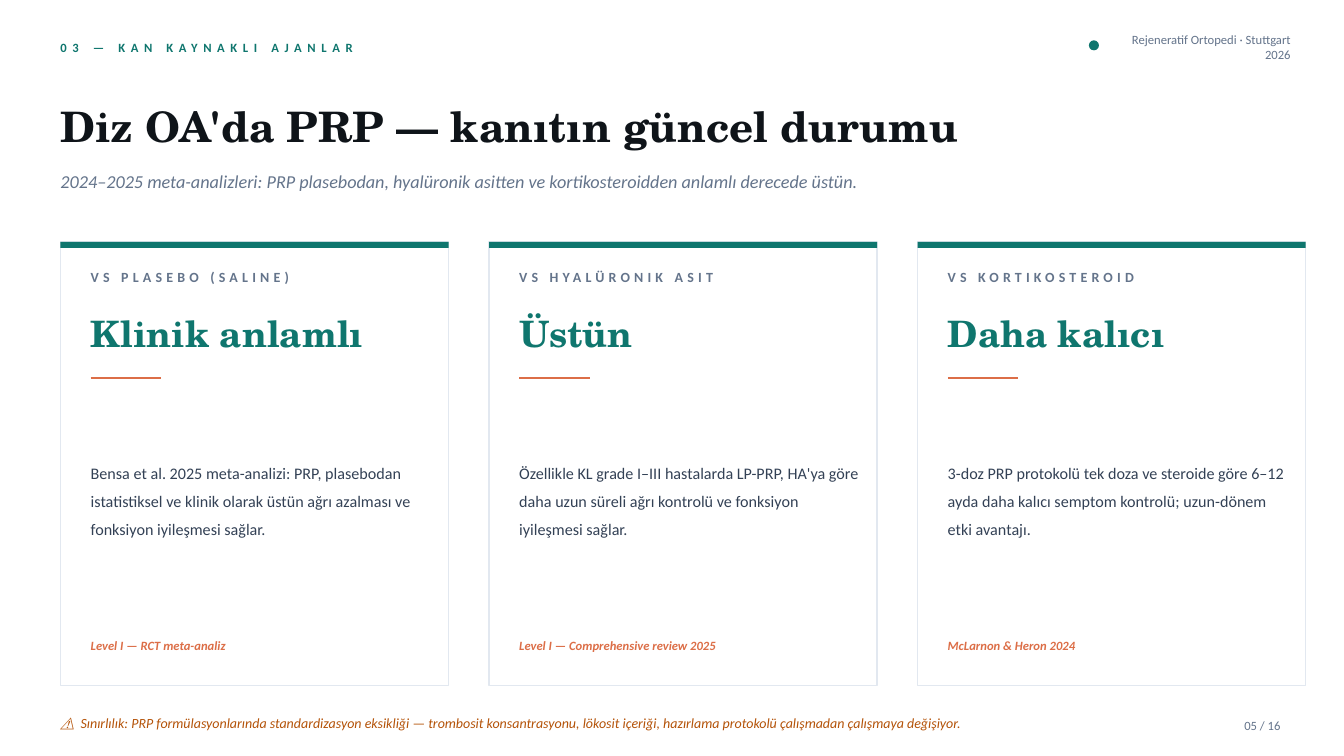
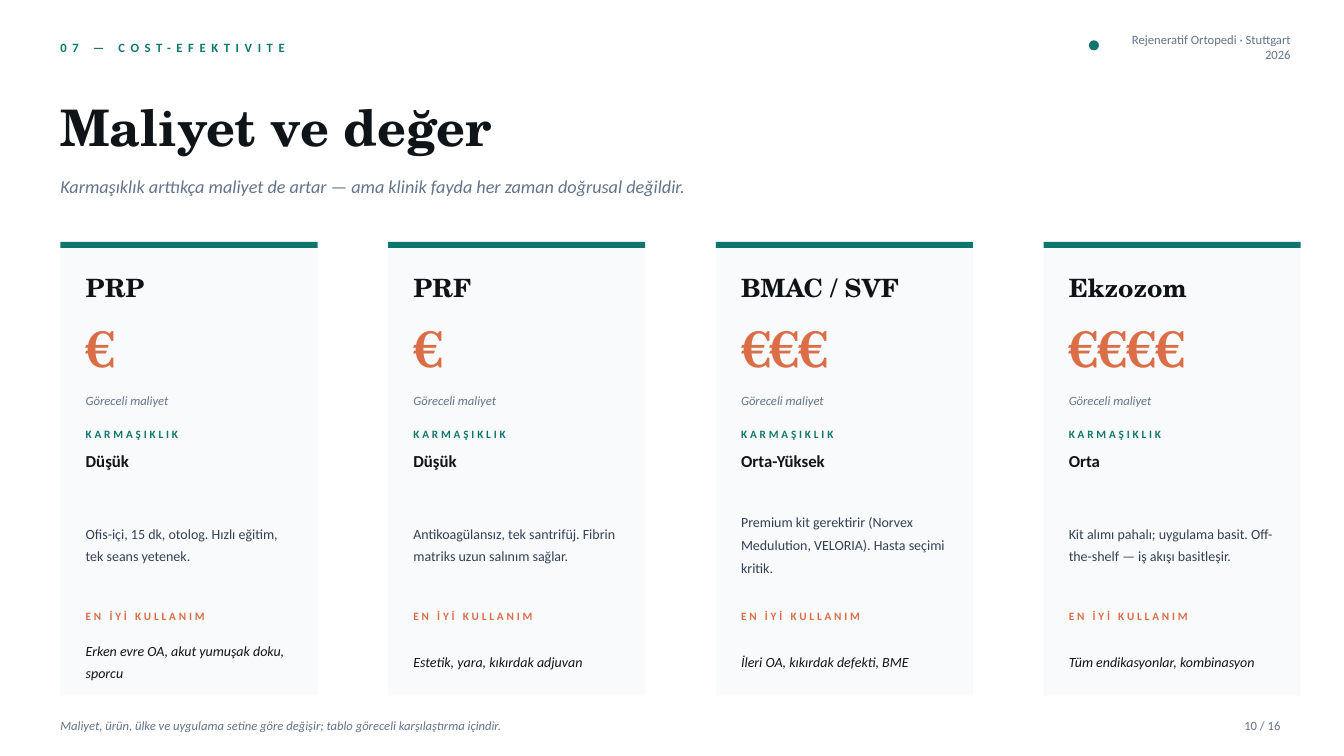
from lxml.etree import SubElement
from pptx import Presentation
from pptx.dml.color import RGBColor
from pptx.enum.shapes import MSO_CONNECTOR as Connector, MSO_SHAPE as Shape
from pptx.enum.text import MSO_ANCHOR as Anchor, MSO_AUTO_SIZE as AutoSize, PP_ALIGN as Align
from pptx.oxml.ns import qn
from pptx.util import Inches, Pt

TEAL = RGBColor(0x0F, 0x76, 0x6E)
CORAL = RGBColor(0xDC, 0x6E, 0x47)
AMBER = RGBColor(0xB4, 0x53, 0x09)
INK = RGBColor(0x0F, 0x14, 0x19)
BODY = RGBColor(0x33, 0x41, 0x55)
MUTED = RGBColor(0x64, 0x74, 0x8B)
BORDER = RGBColor(0xE2, 0xE8, 0xF0)
PALE = RGBColor(0xF8, 0xFA, 0xFC)
WHITE = RGBColor(0xFF, 0xFF, 0xFF)
SANS, SERIF = "Calibri", "TeX Gyre Schola"

LEFT, CARD_TOP = 0.6, 2.4
FULL_WIDTH = 12
PAGE_COUNT = 16

EVIDENCE = [
    ("VS PLASEBO (SALINE)", "Klinik anlamlı",
     "Bensa et al. 2025 meta-analizi: PRP, plasebodan istatistiksel ve klinik olarak "
     "üstün ağrı azalması ve fonksiyon iyileşmesi sağlar.",
     "Level I — RCT meta-analiz"),
    ("VS HYALÜRONIK ASIT", "Üstün",
     "Özellikle KL grade I–III hastalarda LP-PRP, HA'ya göre daha uzun süreli ağrı "
     "kontrolü ve fonksiyon iyileşmesi sağlar.",
     "Level I — Comprehensive review 2025"),
    ("VS KORTIKOSTEROID", "Daha kalıcı",
     "3-doz PRP protokolü tek doza ve steroide göre 6–12 ayda daha kalıcı semptom "
     "kontrolü; uzun-dönem etki avantajı.",
     "McLarnon & Heron 2024"),
]

COSTS = [
    ("PRP", 1, "Düşük", "Ofis-içi, 15 dk, otolog. Hızlı eğitim, tek seans yetenek.",
     "Erken evre OA, akut yumuşak doku, sporcu"),
    ("PRF", 1, "Düşük", "Antikoagülansız, tek santrifüj. Fibrin matriks uzun salınım sağlar.",
     "Estetik, yara, kıkırdak adjuvan"),
    ("BMAC / SVF", 3, "Orta-Yüksek",
     "Premium kit gerektirir (Norvex Medulution, VELORIA). Hasta seçimi kritik.",
     "İleri OA, kıkırdak defekti, BME"),
    ("Ekzozom", 4, "Orta",
     "Kit alımı pahalı; uygulama basit. Off-the-shelf — iş akışı basitleşir.",
     "Tüm endikasyonlar, kombinasyon"),
]


def fill_text(box, text, size, color, font=SANS, bold=False, italic=False,
              align=Align.LEFT, tracking=0, leading=None, tab=None):
    """Write one paragraph, with tracking in points and tab in inches."""
    frame = box.text_frame
    frame.word_wrap = True
    frame.auto_size = AutoSize.NONE
    frame.vertical_anchor = Anchor.MIDDLE
    frame.margin_left = frame.margin_top = frame.margin_right = frame.margin_bottom = 0
    para = frame.paragraphs[0]
    para.text = text
    para.alignment = align
    if leading:
        para.line_spacing = leading
    if tab:
        stops = SubElement(para._p.get_or_add_pPr(), qn("a:tabLst"))
        SubElement(stops, qn("a:tab"), pos=str(Inches(tab)), algn="l")
    para.font.name = font
    para.font.size = Pt(size)
    para.font.bold = bold
    para.font.italic = italic
    para.font.color.rgb = color
    if tracking:
        para.runs[0]._r.get_or_add_rPr().set("spc", str(tracking * 100))


def add_text(page, left, top, width, height, text, size, color, **style):
    box = page.shapes.add_textbox(Inches(left), Inches(top), Inches(width), Inches(height))
    fill_text(box, text, size, color, **style)


def add_block(page, left, top, width, height, fill, line=None, kind=Shape.RECTANGLE):
    block = page.shapes.add_shape(kind, Inches(left), Inches(top), Inches(width), Inches(height))
    block.shadow.inherit = False
    block.fill.solid()
    block.fill.fore_color.rgb = fill
    if line:
        block.line.color.rgb = line
        block.line.width = Pt(1)
    else:
        block.line.fill.background()


def add_rule(page, left, top, width):
    rule = page.shapes.add_connector(
        Connector.STRAIGHT, Inches(left), Inches(top), Inches(left + width), Inches(top))
    rule.line.color.rgb = CORAL
    rule.line.width = Pt(2)
    SubElement(rule._element.spPr, qn("a:effectLst"))


def add_page(deck, number, section, title, title_size, subtitle, subtitle_top):
    page = deck.slides.add_slide(deck.slide_layouts[5])
    heading = page.shapes.title
    heading.left, heading.top = Inches(LEFT), Inches(0.9)
    heading.width, heading.height = Inches(FULL_WIDTH), Inches(0.7)
    fill_text(heading, title, title_size, INK, font=SERIF, bold=True)
    add_text(page, LEFT, subtitle_top, FULL_WIDTH, 0.4, subtitle, 13, MUTED, italic=True)
    add_text(page, LEFT, 0.32, 8, 0.3, section, 9, TEAL, bold=True, tracking=4)
    add_block(page, 10.8, 0.4, 0.1, 0.1, TEAL, kind=Shape.OVAL)
    add_text(page, 10.95, 0.32, 1.85, 0.3, "Rejeneratif Ortopedi · Stuttgart 2026",
             9, MUTED, align=Align.RIGHT)
    add_text(page, 11.8, 7.05, 0.9, 0.3, f"{number:02} / {PAGE_COUNT}",
             9, MUTED, align=Align.RIGHT)
    return page


def add_card(page, left, top, width, height, fill, line=None):
    add_block(page, left, top, width, height, fill, line)
    add_block(page, left, top, width, 0.06, TEAL)


def add_evidence_card(page, left, top, width, height, content):
    comparator, verdict, finding, source = content
    add_card(page, left, top, width, height, WHITE, BORDER)
    inner, span = left + 0.3, width - 0.45
    add_text(page, inner, top + 0.2, span, 0.3, comparator, 10, MUTED, bold=True, tracking=3)
    add_text(page, inner, top + 0.55, span, 0.7, verdict, 26, TEAL, font=SERIF, bold=True)
    add_rule(page, inner, top + 1.35, 0.7)
    add_text(page, inner, top + 1.55, span, 1.95, finding, 11.5, BODY, leading=1.45)
    add_text(page, inner, top + height - 0.55, span, 0.3, source, 9, CORAL,
             bold=True, italic=True)


def add_cost_card(page, left, top, width, height, content):
    product, euros, complexity, detail, best_use = content
    add_card(page, left, top, width, height, PALE)
    rows = [  # offset, height, text, size, colour, style
        (0.2, 0.5, product, 18, INK, dict(font=SERIF, bold=True)),
        (0.7, 0.7, "€" * euros, 36, CORAL, dict(font=SERIF, bold=True)),
        (1.45, 0.25, "Göreceli maliyet", 9, MUTED, dict(italic=True)),
        (1.8, 0.22, "KARMAŞIKLIK", 8, TEAL, dict(bold=True, tracking=2)),
        (2.02, 0.3, complexity, 12, INK, dict(bold=True)),
        (2.45, 1.05, detail, 10, BODY, dict(leading=1.35)),
        (3.6, 0.22, "EN İYİ KULLANIM", 8, CORAL, dict(bold=True, tracking=2)),
        (3.82, 0.65, best_use, 10, INK, dict(italic=True, leading=1.3)),
    ]
    for offset, row_height, text, size, color, style in rows:
        add_text(page, left + 0.25, top + offset, width - 0.5, row_height,
                 text, size, color, **style)


def add_card_row(page, add_one, contents, width, height, gap):
    for index, content in enumerate(contents):
        add_one(page, LEFT + index * (width + gap), CARD_TOP, width, height, content)


def build_evidence_page(deck):
    page = add_page(
        deck, 5, "03 — KAN KAYNAKLI AJANLAR", "Diz OA'da PRP — kanıtın güncel durumu", 30,
        "2024–2025 meta-analizleri: PRP plasebodan, hyalüronik asitten ve "
        "kortikosteroidden anlamlı derecede üstün.", 1.6)
    add_card_row(page, add_evidence_card, EVIDENCE, 3.85, 4.4, 0.4)
    add_text(page, LEFT, 7, FULL_WIDTH, 0.35,
             "⚠\tSınırlılık: PRP formülasyonlarında standardizasyon eksikliği — trombosit "
             "konsantrasyonu, lökosit içeriği, hazırlama protokolü çalışmadan çalışmaya "
             "değişiyor.", 10, AMBER, italic=True, tab=0.2)


def build_cost_page(deck):
    page = add_page(
        deck, 10, "07 — COST-EFEKTIVITE", "Maliyet ve değer", 36,
        "Karmaşıklık arttıkça maliyet de artar — ama klinik fayda her zaman "
        "doğrusal değildir.", 1.65)
    add_card_row(page, add_cost_card, COSTS, 2.55, 4.5, 0.7)
    add_text(page, LEFT, 7.05, FULL_WIDTH, 0.3,
             "Maliyet, ürün, ülke ve uygulama setine göre değişir; tablo göreceli "
             "karşılaştırma içindir.", 9, MUTED, italic=True)


def main():
    deck = Presentation()
    deck.slide_width, deck.slide_height = Inches(13.33), Inches(7.5)
    build_evidence_page(deck)
    build_cost_page(deck)
    deck.save("out.pptx")


if __name__ == "__main__":
    main()
